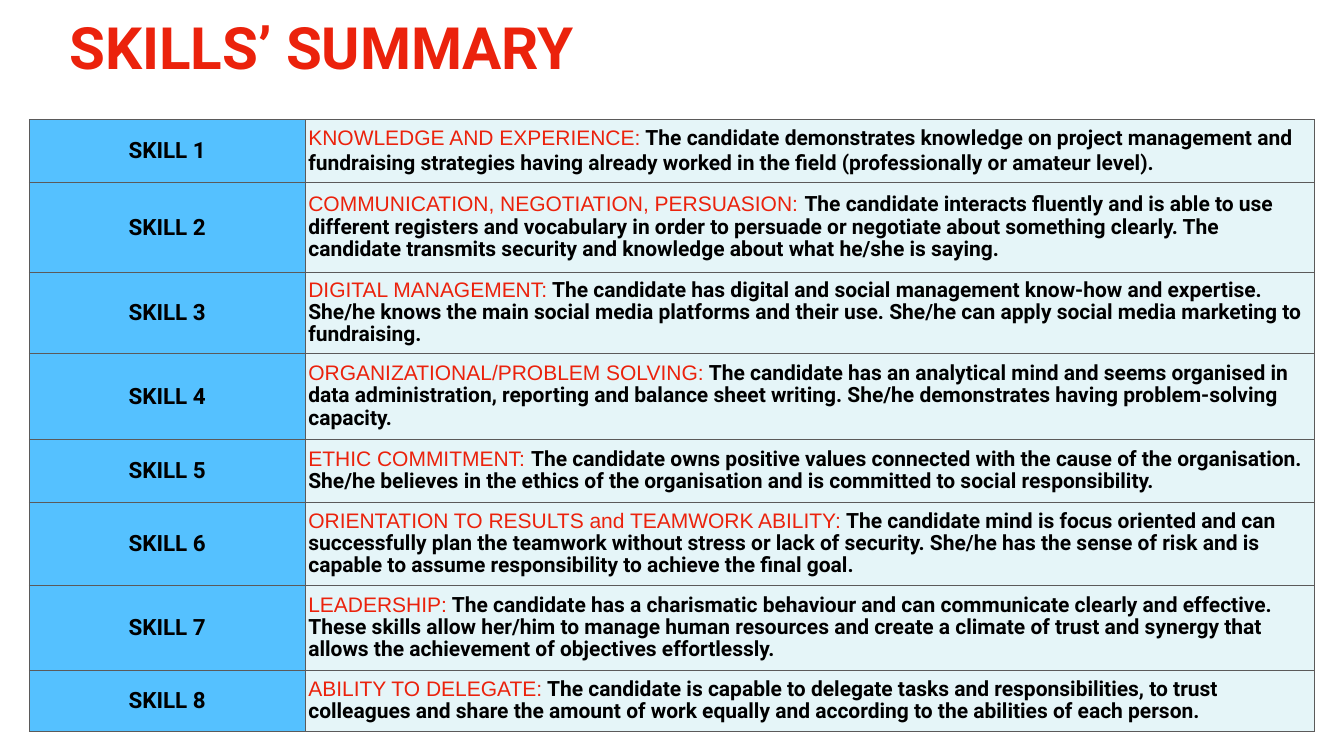
from lxml import etree
from pptx import Presentation
from pptx.dml.color import RGBColor
from pptx.enum import text
from pptx.oxml import ns
from pptx.util import Cm, Pt

RED = RGBColor(0xEB, 0x22, 0x0C)
BLACK = RGBColor(0, 0, 0)
BLUE = RGBColor(0x55, 0xC1, 0xFF)
PALE = RGBColor(0xE5, 0xF5, 0xF8)
GREY = RGBColor(0x5B, 0x5A, 0x5A)
INSET = Cm(0.15)
COLUMN_WIDTHS = (13.92, 50.83)

# Row height in cm, skill heading, description
SKILLS = [
    (3.18, "KNOWLEDGE AND EXPERIENCE:",
     " The candidate demonstrates knowledge on project management and fundraising "
     "strategies having already worked in the field (professionally or amateur level)."),
    (4.52, "COMMUNICATION, NEGOTIATION, PERSUASION: ",
     "The candidate interacts fluently and is able to use different registers and "
     "vocabulary in order to persuade or negotiate about something clearly. The "
     "candidate transmits security and knowledge about what he/she is saying."),
    (4.11, "DIGITAL MANAGEMENT:",
     " The candidate has digital and social management know-how and expertise. She/he "
     "knows the main social media platforms and their use. She/he can apply social "
     "media marketing to fundraising."),
    (4.29, "ORGANIZATIONAL/PROBLEM SOLVING:",
     " The candidate has an analytical mind and seems organised in data administration, "
     "reporting and balance sheet writing. She/he demonstrates having problem-solving "
     "capacity."),
    (3.18, "ETHIC COMMITMENT: ",
     "The candidate owns positive values connected with the cause of the organisation. "
     "She/he believes in the ethics of the organisation and is committed to social "
     "responsibility."),
    (4.19, "ORIENTATION TO RESULTS and TEAMWORK ABILITY:",
     " The candidate mind is focus oriented and can successfully plan the teamwork "
     "without stress or lack of security. She/he has the sense of risk and is capable "
     "to assume responsibility to achieve the final goal."),
    (4.27, "LEADERSHIP:",
     " The candidate has a charismatic behaviour and can communicate clearly and "
     "effective. These skills allow her/him to manage human resources and create a "
     "climate of trust and synergy that allows the achievement of objectives "
     "effortlessly."),
    (3.12, "ABILITY TO DELEGATE:",
     " The candidate is capable to delegate tasks and responsibilities, to trust "
     "colleagues and share the amount of work equally and according to the abilities "
     "of each person."),
]


def set_insets(target):
    target.margin_left = target.margin_right = INSET
    target.margin_top = target.margin_bottom = INSET


def add_run(paragraph, words, size, color, font="Roboto", bold=True):
    run = paragraph.add_run()
    run.text = words
    run.font.name = font
    run.font.size = Pt(size)
    run.font.bold = bold
    run.font.color.rgb = color


def add_title(slide, words):
    title = slide.shapes.title
    title.left, title.top = Cm(3.35), Cm(1.12)
    title.width, title.height = Cm(61.04), Cm(3.99)
    frame = title.text_frame
    set_insets(frame)
    frame.word_wrap = True
    frame.auto_size = text.MSO_AUTO_SIZE.NONE
    frame.vertical_anchor = text.MSO_ANCHOR.TOP
    paragraph = frame.paragraphs[0]
    paragraph.alignment = text.PP_ALIGN.LEFT
    paragraph.line_spacing = 0.8
    add_run(paragraph, words, 83.3, RED)


def add_borders(cell):
    """Draw a thin grey line on all four sides, placed before the cell fill."""
    properties = cell._tc.get_or_add_tcPr()
    for index, side in enumerate(("a:lnL", "a:lnR", "a:lnT", "a:lnB")):
        line = etree.Element(ns.qn(side), w=str(Pt(1)))
        fill = etree.SubElement(line, ns.qn("a:solidFill"))
        etree.SubElement(fill, ns.qn("a:srgbClr"), val=str(GREY))
        properties.insert(index, line)


def format_cell(cell, color):
    """Style the cell and return its paragraph."""
    cell.fill.solid()
    cell.fill.fore_color.rgb = color
    cell.vertical_anchor = text.MSO_ANCHOR.MIDDLE
    set_insets(cell)
    add_borders(cell)
    return cell.text_frame.paragraphs[0]


def add_skills_table(slide):
    frame = slide.shapes.add_table(
        len(SKILLS), len(COLUMN_WIDTHS), Cm(1.47), Cm(6.02),
        Cm(sum(COLUMN_WIDTHS)), Cm(sum(skill[0] for skill in SKILLS)))
    table = frame.table
    table.first_row = table.horz_banding = False
    for column, width in zip(table.columns, COLUMN_WIDTHS):
        column.width = Cm(width)
    for index, (height, heading, description) in enumerate(SKILLS):
        table.rows[index].height = Cm(height)
        label = format_cell(table.cell(index, 0), BLUE)
        label.alignment = text.PP_ALIGN.CENTER
        add_run(label, f"SKILL {index + 1}", 32, BLACK)
        details = format_cell(table.cell(index, 1), PALE)
        if index > 0:
            details.line_spacing = 0.9
        add_run(details, heading, 30, RED, font="Arial", bold=False)
        add_run(details, description, 30, BLACK)


def main():
    presentation = Presentation()
    presentation.slide_width, presentation.slide_height = Cm(67.74), Cm(38.1)
    slide = presentation.slides.add_slide(presentation.slide_layouts[5])
    add_title(slide, "SKILLS’ SUMMARY")
    add_skills_table(slide)
    presentation.save("out.pptx")


if __name__ == "__main__":
    main()
